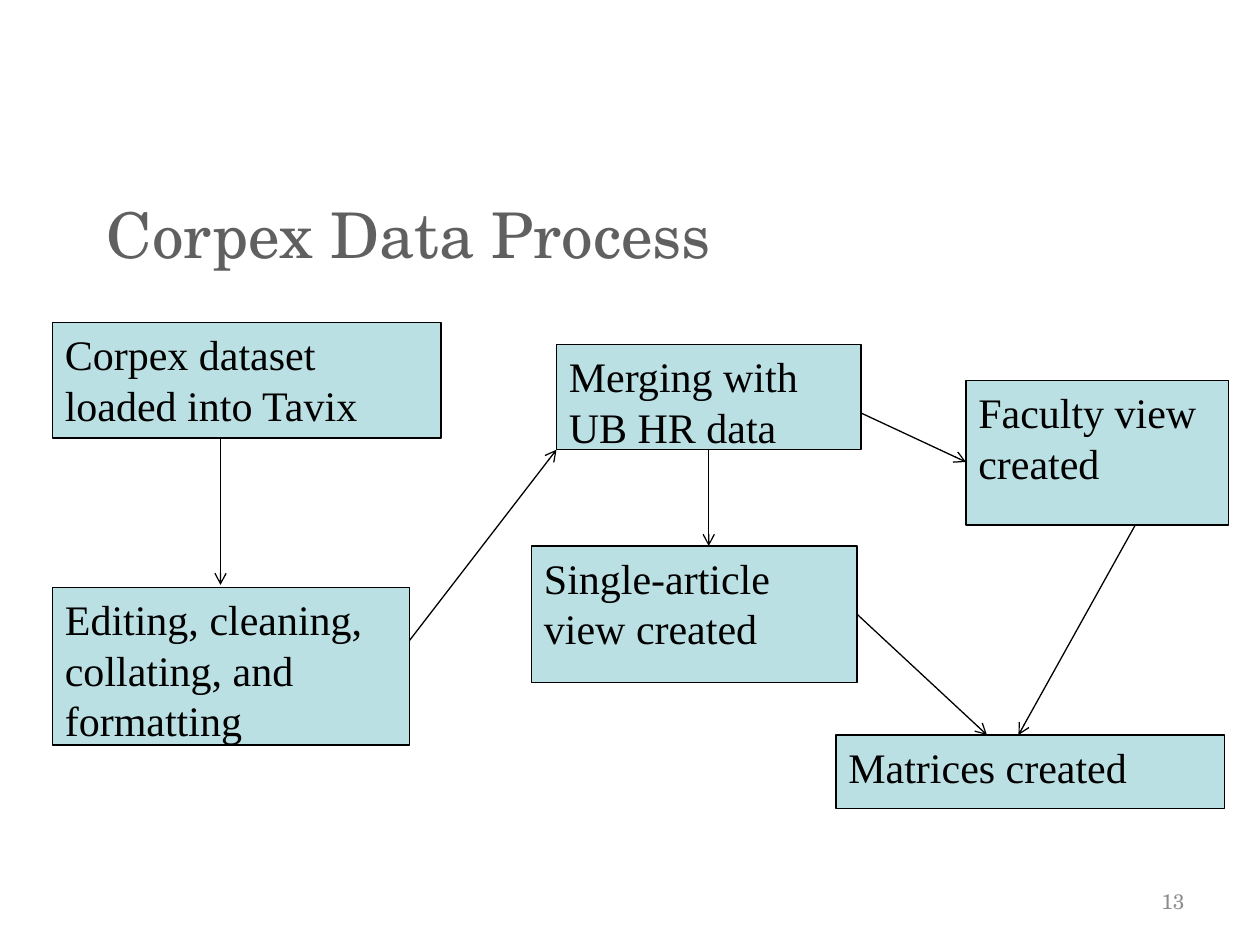
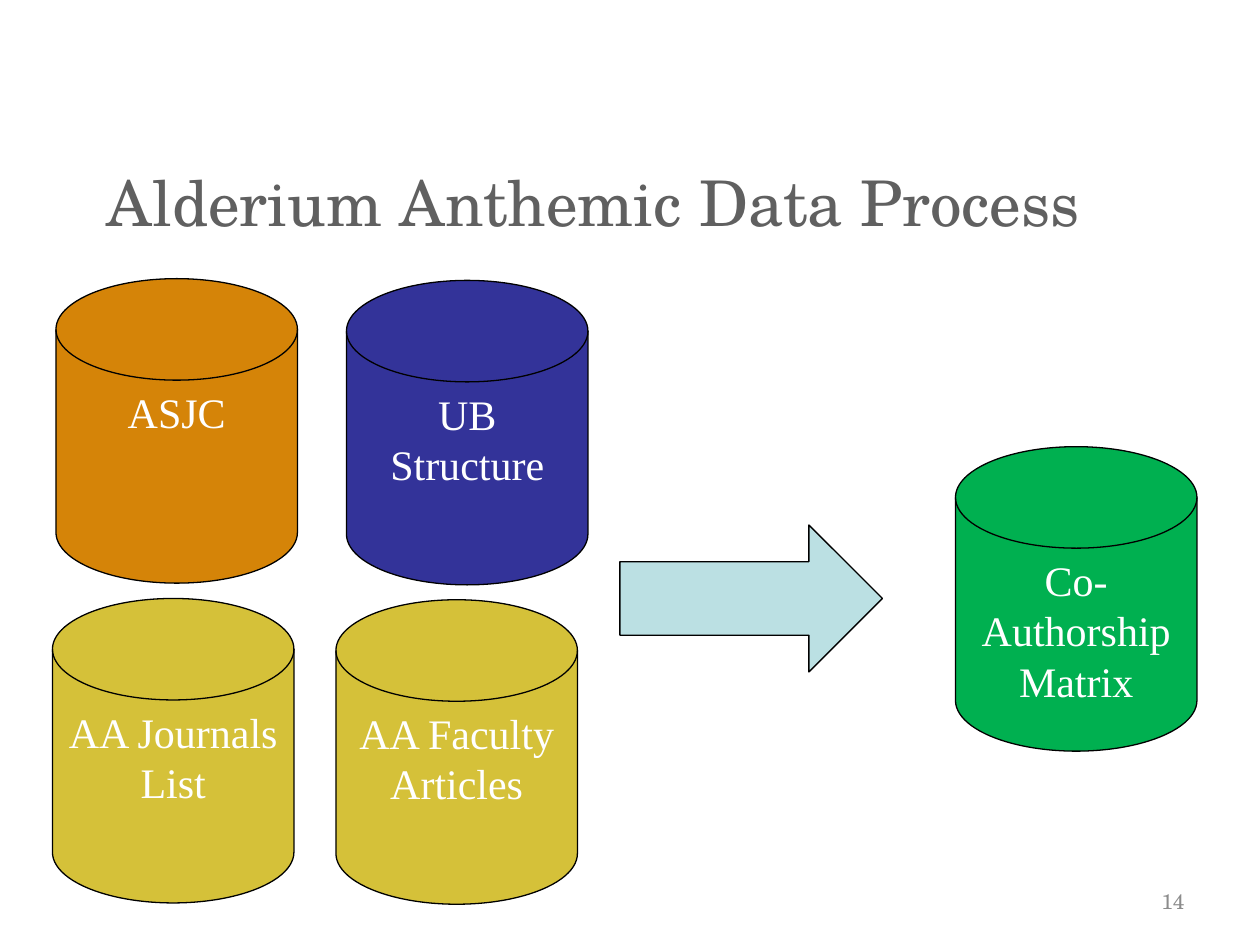
from lxml.etree import SubElement
from pptx import Presentation
from pptx.dml.color import RGBColor
from pptx.enum.shapes import MSO_CONNECTOR, MSO_SHAPE as SHAPE
from pptx.enum.text import MSO_ANCHOR as ANCHOR, PP_ALIGN as ALIGN
from pptx.oxml.ns import qn
from pptx.util import Pt

COLORS = {
    "title": "606060", "number": "8C8C8C", "black": "000000", "white": "FFFFFF",
    "pale": "BBE0E3", "orange": "D58408", "blue": "333399",
    "yellow": "D5C139", "green": "00B050",
}
HEADING_FONT = "TeX Gyre Schola"
BODY_FONT = "Times New Roman"
BOTTOM, RIGHT = 2, 3
DISK_SIZE = (138, 174)

STEPS = {
    "load": ("Corpex dataset loaded into Tavix", SHAPE.FLOWCHART_PROCESS, (30, 184.25, 222, 66)),
    "edit": ("Editing, cleaning, collating, and formatting", SHAPE.RECTANGLE, (30, 335.75, 204, 90)),
    "merge": ("Merging with UB HR data", SHAPE.RECTANGLE, (318, 197, 174, 60)),
    "article": ("Single-article view created", SHAPE.RECTANGLE, (303.75, 312, 186, 78)),
    "faculty": ("Faculty view created", SHAPE.RECTANGLE, (552, 217.5, 150, 82.5)),
    "matrices": ("Matrices created", SHAPE.RECTANGLE, (477.75, 420, 222, 42)),
}
ARROWS = [
    ((126, 250.25), (126, 334.25), None),
    ((234, 366), (318, 257), None),
    ((405, 257), (405, 312), ("merge", BOTTOM)),
    ((492, 236), (552, 264), None),
    ((489.75, 351), (564, 420), ("article", RIGHT)),
    ((648.75, 300), (582, 420), None),
]
DISKS = [
    ("AA Journals List", "yellow", (30, 342)),
    ("ASJC", "orange", (32, 159.25)),
    ("AA Faculty Articles", "yellow", (192, 342.75)),
    ("UB Structure", "blue", (198, 160.25)),
    ("Co-Authorship Matrix", "green", (546, 255.25)),
]
FLOW_ARROW = (354.25, 300, 150, 84)


def color(name):
    return RGBColor.from_string(COLORS[name])


def write(shape, text, font_name, size, color_name, align=ALIGN.LEFT, anchor=ANCHOR.TOP):
    frame = shape.text_frame
    frame.word_wrap = True
    frame.vertical_anchor = anchor
    paragraph = frame.paragraphs[0]
    paragraph.alignment = align
    run = paragraph.add_run()
    run.text = text
    run.font.name = font_name
    run.font.size = Pt(size)
    run.font.color.rgb = color(color_name)


def add_text(slide, box, *style):
    write(slide.shapes.add_textbox(*map(Pt, box)), *style)


def add_block(slide, kind, box, fill):
    shape = slide.shapes.add_shape(kind, *map(Pt, box))
    shape.shadow.inherit = False
    shape.fill.solid()
    shape.fill.fore_color.rgb = color(fill)
    shape.line.color.rgb = color("black")
    shape.line.width = Pt(0.75)
    return shape


def add_arrow(slide, start, end):
    connector = slide.shapes.add_connector(MSO_CONNECTOR.STRAIGHT, *map(Pt, start + end))
    connector.line.color.rgb = color("black")
    connector.line.width = Pt(0.75)
    SubElement(connector.line._get_or_add_ln(), qn("a:tailEnd"), type="arrow")
    SubElement(connector._element.spPr, qn("a:effectLst"))
    return connector


def add_slide(presentation, title, title_top, number):
    slide = presentation.slides.add_slide(presentation.slide_layouts[6])
    add_text(slide, (54, title_top, 612, 90), title, HEADING_FONT, 36, "title")
    add_text(slide, (516, 500.5, 168, 29), number, HEADING_FONT, 12, "number",
             ALIGN.RIGHT, ANCHOR.MIDDLE)
    return slide


def build_steps(presentation):
    slide = add_slide(presentation, "Corpex Data Process", 108, "13")
    blocks = {}
    for name, (text, kind, box) in STEPS.items():
        blocks[name] = add_block(slide, kind, box, "pale")
        write(blocks[name], text, BODY_FONT, 24, "black")
    for start, end, joint in ARROWS:
        connector = add_arrow(slide, start, end)
        if joint:
            name, side = joint
            connector.begin_connect(blocks[name], side)


def build_disks(presentation):
    slide = add_slide(presentation, "Alderium Anthemic Data Process", 90, "14")
    for text, fill, corner in DISKS:
        disk = add_block(slide, SHAPE.FLOWCHART_MAGNETIC_DISK, corner + DISK_SIZE, fill)
        write(disk, text, BODY_FONT, 24, "white", ALIGN.CENTER)
    add_block(slide, SHAPE.RIGHT_ARROW, FLOW_ARROW, "pale")


def main():
    presentation = Presentation()
    presentation.slide_width = Pt(720)
    presentation.slide_height = Pt(540)
    build_steps(presentation)
    build_disks(presentation)
    presentation.save("out.pptx")


if __name__ == "__main__":
    main()
